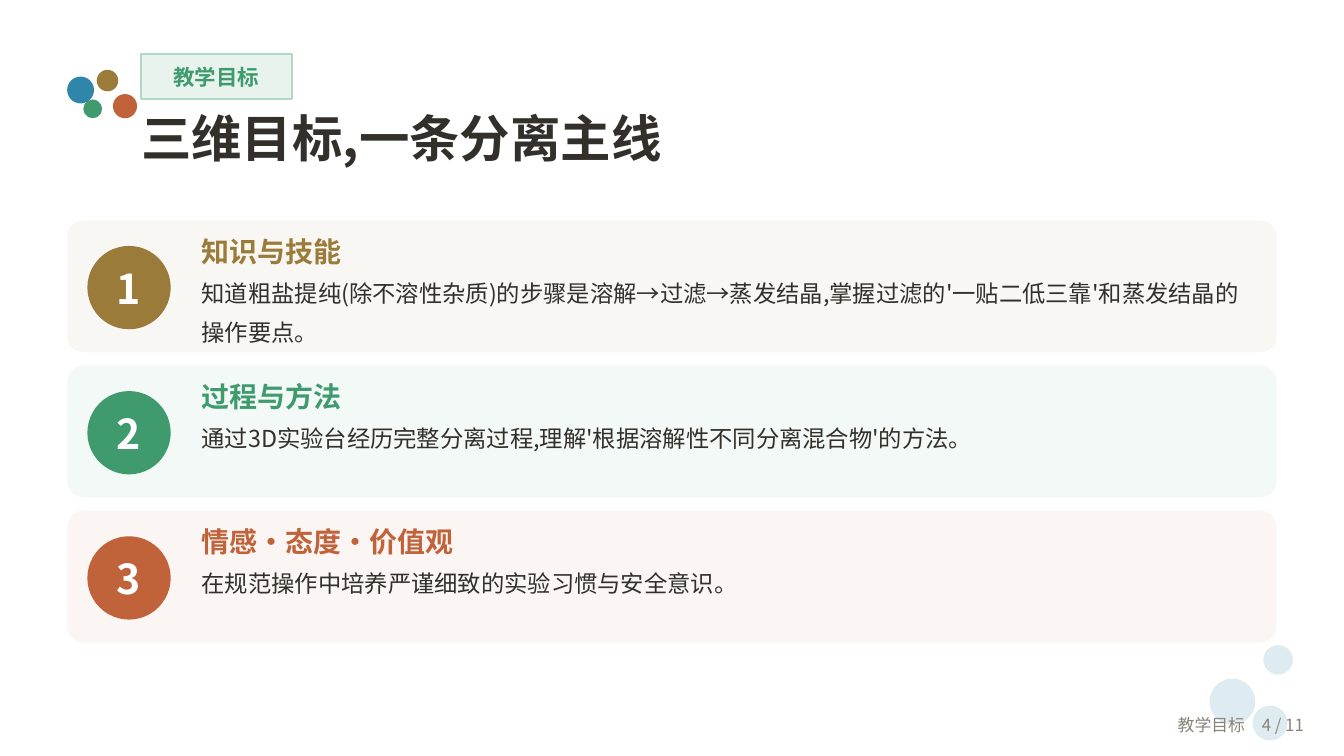
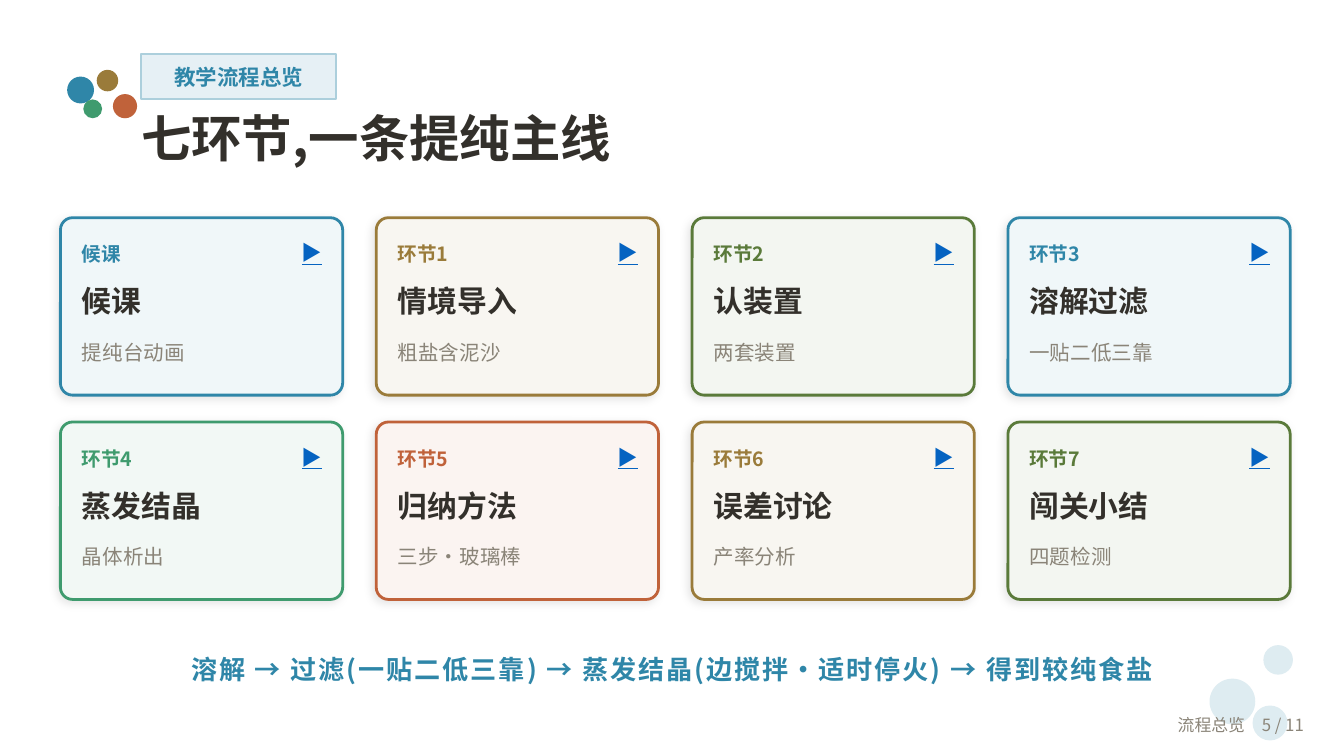
from lxml.etree import SubElement
from pptx import Presentation
from pptx.dml.color import RGBColor
from pptx.enum.shapes import MSO_SHAPE as Shape
from pptx.enum.text import MSO_ANCHOR as Anchor, MSO_AUTO_SIZE as AutoSize, PP_ALIGN as Align
from pptx.oxml import parse_xml
from pptx.oxml.ns import nsdecls, qn
from pptx.util import Inches, Pt

FONT = "Noto Sans CJK SC"
WHITE = RGBColor(0xFF, 0xFF, 0xFF)
INK = RGBColor(0x33, 0x30, 0x2B)
MUTED = RGBColor(0x8A, 0x84, 0x78)
LINK = RGBColor(0x05, 0x63, 0xC1)
BLUE = RGBColor(0x2F, 0x86, 0xA8)
GOLD = RGBColor(0x9A, 0x7B, 0x3A)
GREEN = RGBColor(0x3F, 0x9B, 0x6E)
RUST = RGBColor(0xC0, 0x62, 0x3A)
OLIVE = RGBColor(0x5A, 0x7A, 0x3A)
BUBBLE = RGBColor(0xDE, 0xEC, 0xF1)
TAG_GREEN = (GREEN, RGBColor(0xE8, 0xF3, 0xEE), RGBColor(0xB2, 0xD7, 0xC5))
TAG_BLUE = (BLUE, RGBColor(0xE6, 0xF0, 0xF5), RGBColor(0xAC, 0xCF, 0xDC))
STEP_FILLS = {
    BLUE: RGBColor(0xF0, 0xF7, 0xF9),
    GOLD: RGBColor(0xF8, 0xF6, 0xF1),
    OLIVE: RGBColor(0xF3, 0xF6, 0xF1),
    GREEN: RGBColor(0xF2, 0xF8, 0xF5),
    RUST: RGBColor(0xFB, 0xF4, 0xF1),
}

PAGE_COUNT = 11
BUBBLES = [
    (9, 5.05, 0.34, BUBBLE), (9.4, 4.8, 0.22, BUBBLE), (9.32, 5.25, 0.26, BUBBLE),
    (0.5, 0.57, 0.2, BLUE), (0.72, 0.52, 0.16, GOLD),
    (0.62, 0.74, 0.14, GREEN), (0.84, 0.7, 0.18, RUST),
]
OBJECTIVES = [
    ("知识与技能",
     "知道粗盐提纯(除不溶性杂质)的步骤是溶解→过滤→蒸发结晶,掌握过滤的'一贴二低三靠'和蒸发结晶的操作要点。",
     GOLD, RGBColor(0xF9, 0xF7, 0xF3)),
    ("过程与方法", "通过3D实验台经历完整分离过程,理解'根据溶解性不同分离混合物'的方法。",
     GREEN, RGBColor(0xF3, 0xF9, 0xF6)),
    ("情感·态度·价值观", "在规范操作中培养严谨细致的实验习惯与安全意识。",
     RUST, RGBColor(0xFB, 0xF6, 0xF3)),
]
STEPS = [
    ("候课", "提纯台动画", BLUE), ("情境导入", "粗盐含泥沙", GOLD),
    ("认装置", "两套装置", OLIVE), ("溶解过滤", "一贴二低三靠", BLUE),
    ("蒸发结晶", "晶体析出", GREEN), ("归纳方法", "三步·玻璃棒", RUST),
    ("误差讨论", "产率分析", GOLD), ("闯关小结", "四题检测", OLIVE),
]


def write(paragraph, text, size=11, color=INK, bold=False, underline=False,
          align=Align.LEFT, leading=None, tracking=None):
    """Fill a paragraph with one formatted run."""
    paragraph.alignment = align
    if leading:
        paragraph.line_spacing = Pt(leading)
    run = paragraph.add_run()
    run.text = text
    font = run.font
    font.name, font.size, font.bold = FONT, Pt(size), bold
    font.color.rgb = color
    if underline:
        font.underline = True
    properties = font._element
    SubElement(properties, qn("a:ea")).set("typeface", FONT)
    if tracking:
        properties.set("spc", str(tracking * 100))


def set_frame(frame, anchor=Anchor.MIDDLE, inset=True):
    """Wrap a text frame, anchor it and optionally drop its margins."""
    frame.word_wrap = True
    frame.auto_size = AutoSize.NONE
    frame.vertical_anchor = anchor
    if not inset:
        frame.margin_left = frame.margin_right = frame.margin_top = frame.margin_bottom = 0
    return frame


def add_label(slide, box, text, anchor=Anchor.MIDDLE, inset=False, **style):
    """Add a text box holding one paragraph and return its frame."""
    label = slide.shapes.add_textbox(*map(Inches, box))
    frame = set_frame(label.text_frame, anchor, inset)
    write(frame.paragraphs[0], text, **style)
    return frame


def add_panel(slide, kind, box, fill, line=None, line_width=1, corner=None):
    """Add a flat preset shape; corner is the radius in inches."""
    panel = slide.shapes.add_shape(kind, *map(Inches, box))
    panel.shadow.inherit = False
    panel.fill.solid()
    panel.fill.fore_color.rgb = fill
    if line is None:
        panel.line.fill.background()
    else:
        panel.line.color.rgb = line
        panel.line.width = Pt(line_width)
    if corner:
        panel.adjustments[0] = corner / min(box[2:])
    return panel


def add_soft_shadow(panel):
    """Give a shape a faint shadow towards the lower left."""
    effects = panel._element.spPr.find(qn("a:effectLst"))
    effects.append(parse_xml(
        f'<a:outerShdw {nsdecls("a")} blurRad="{Pt(5)}" dist="{Pt(2)}" dir="8100000" '
        'algn="bl" rotWithShape="0"><a:srgbClr val="000000">'
        '<a:alpha val="10000"/></a:srgbClr></a:outerShdw>'))


def start_slide(deck, heading, tag, tag_width, tag_colors, section, page):
    """Add a slide with bubbles, tag, title and footer."""
    slide = deck.slides.add_slide(deck.slide_layouts[5])
    for left, top, size, color in BUBBLES:
        add_panel(slide, Shape.OVAL, (left, top, size, size), color)

    text_color, fill, line = tag_colors
    badge = add_panel(slide, Shape.RECTANGLE, (1.05, 0.4, tag_width, 0.34), fill, line)
    write(set_frame(badge.text_frame, inset=False).paragraphs[0], tag,
          size=11.5, color=text_color, bold=True, align=Align.CENTER)

    title = slide.shapes.title
    title.left, title.top, title.width, title.height = map(Inches, (1.05, 0.8, 8.4, 0.55))
    write(set_frame(title.text_frame, Anchor.TOP, inset=False).paragraphs[0],
          heading, size=27, bold=True)

    add_label(slide, (8, 5.24, 1.8, 0.3), f"{section}　{page} / {PAGE_COUNT}",
              inset=True, size=9, color=MUTED, align=Align.RIGHT)
    return slide


def add_objective(slide, box, number, name, detail, color, fill):
    """Draw one numbered objective band inside its box."""
    left, top, width, height = box
    add_panel(slide, Shape.ROUNDED_RECTANGLE, box, fill, corner=0.12)
    disc = (left + 0.15, top + 0.19, 0.62, 0.62)
    add_panel(slide, Shape.OVAL, disc, color)
    add_label(slide, disc, str(number), size=22, color=WHITE, bold=True, align=Align.CENTER)
    frame = add_label(slide, (left + 1, top + 0.06, width - 1.15, height - 0.03), name,
                      anchor=Anchor.TOP, size=15, color=color, bold=True, leading=21)
    write(frame.add_paragraph(), detail, size=12.5, leading=21)


def add_step(slide, box, stage, name, detail, color):
    """Draw one step card inside its box."""
    left, top, width, _ = box
    card = add_panel(slide, Shape.ROUNDED_RECTANGLE, box, STEP_FILLS[color], color, 1.5, 0.09)
    add_soft_shadow(card)
    inner, inner_width = left + 0.16, width - 0.3
    add_label(slide, (inner, top + 0.12, 1.2, 0.3), stage, size=10.5, color=color, bold=True)
    add_label(slide, (left + width - 0.55, top + 0.1, 0.4, 0.32), "▶",
              color=LINK, underline=True, align=Align.RIGHT)
    add_label(slide, (inner, top + 0.42, inner_width, 0.4), name, size=16, bold=True)
    add_label(slide, (inner, top + 0.85, inner_width, 0.3), detail, color=MUTED)


def build_objectives(deck):
    """Build the slide of the three teaching objectives."""
    slide = start_slide(deck, "三维目标,一条分离主线", "教学目标", 1.12, TAG_GREEN, "教学目标", 4)
    for index, objective in enumerate(OBJECTIVES):
        add_objective(slide, (0.5, 1.64 + 1.08 * index, 9, 0.98), index + 1, *objective)


def build_steps(deck):
    """Build the slide of the teaching flow."""
    slide = start_slide(deck, "七环节,一条提纯主线", "教学流程总览", 1.45, TAG_BLUE, "流程总览", 5)
    for index, step in enumerate(STEPS):
        row, column = divmod(index, 4)
        stage = f"环节{index}" if index else "候课"
        add_step(slide, (0.45 + 2.35 * column, 1.62 + 1.52 * row, 2.1, 1.32), stage, *step)
    add_label(slide, (0.5, 4.78, 9, 0.4),
              "溶解 → 过滤(一贴二低三靠) → 蒸发结晶(边搅拌·适时停火) → 得到较纯食盐",
              inset=True, size=14, color=BLUE, bold=True, align=Align.CENTER, tracking=1)


def main():
    """Build and save the deck."""
    deck = Presentation()
    deck.slide_width, deck.slide_height = Inches(10), Inches(10 * 9 / 16)
    build_objectives(deck)
    build_steps(deck)
    deck.save("out.pptx")


if __name__ == "__main__":
    main()
